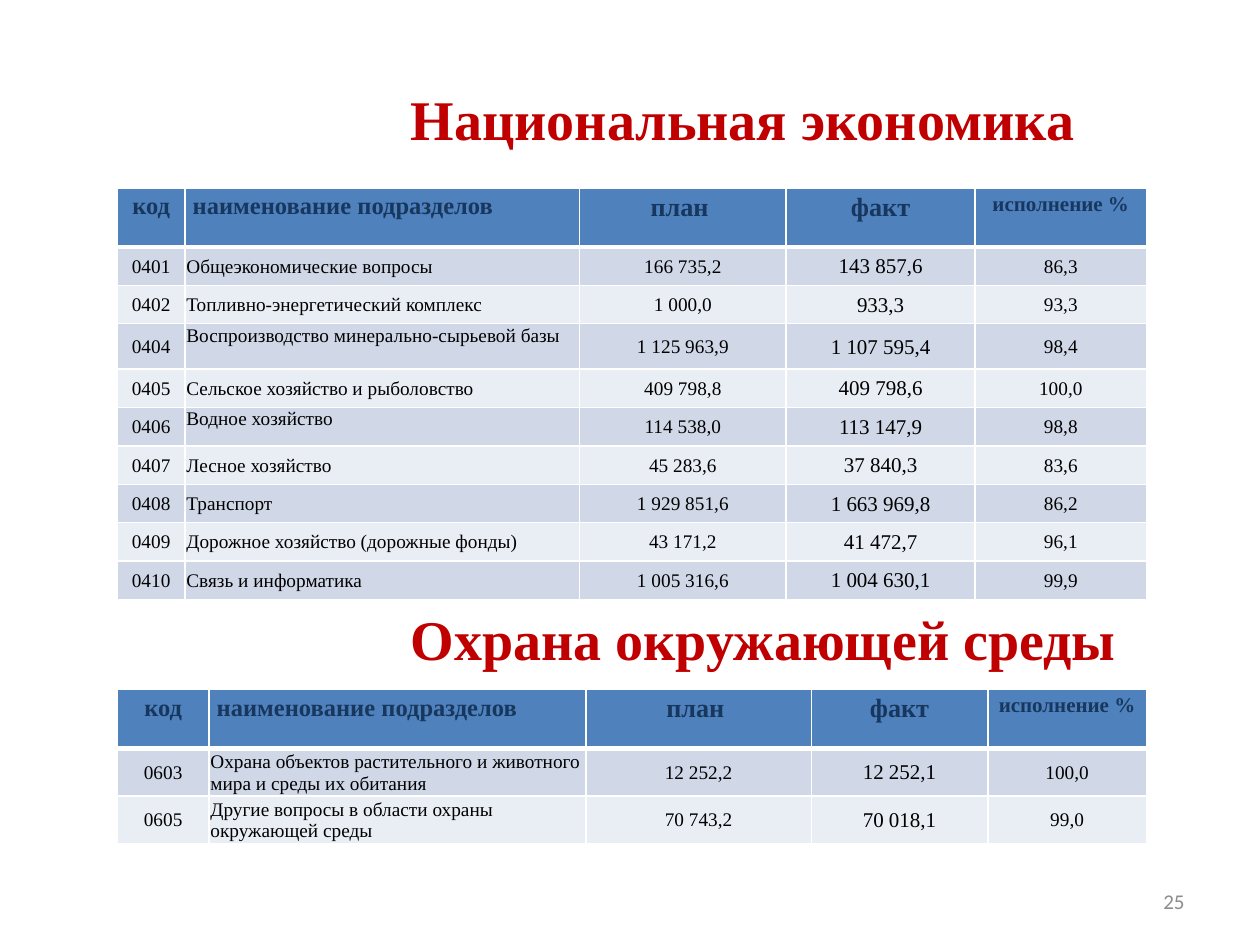
from dataclasses import dataclass

from lxml.etree import SubElement
from pptx import Presentation
from pptx.dml.color import RGBColor
from pptx.enum.text import MSO_ANCHOR, MSO_AUTO_SIZE, PP_ALIGN
from pptx.oxml.ns import qn
from pptx.util import Inches, Pt


@dataclass(frozen=True)
class Theme:
    serif: str = "Times New Roman"
    sans: str = "Calibri"
    heading: str = "C00000"
    header_text: str = "17375E"
    header_fill: str = "4F81BD"
    body_text: str = "000000"
    bands: tuple = ("D0D8E8", "E9EDF4")
    border: str = "FFFFFF"
    page_number: str = "8C8C8C"
    heading_size: int = 32
    header_sizes: tuple = (14, 14, 15, 15, 12)
    body_sizes: tuple = (11, 11, 11, 12, 11)
    page_number_size: int = 12


THEME = Theme()
HEADER_HEIGHT = 0.47
HEADER_MARGINS = (0.06, 0.04, 0.06, 0.04)
BODY_MARGINS = (0.01, 0.01, 0.01, 0)
ALIGNMENTS = (PP_ALIGN.CENTER, PP_ALIGN.LEFT) + (PP_ALIGN.CENTER,) * 3

HEADER = ("код", "наименование подразделов", "план ", "факт", "исполнение %")
ECONOMY = (
    ("0401", "Общеэкономические вопросы", "166 735,2", "143 857,6", "86,3"),
    ("0402", "Топливно-энергетический комплекс", "1 000,0", "933,3", "93,3"),
    ("0404", "Воспроизводство минерально-сырьевой базы",
     "1 125 963,9", "1 107 595,4", "98,4"),
    ("0405", "Сельское хозяйство и рыболовство", "409 798,8", "409 798,6", "100,0"),
    ("0406", "Водное хозяйство", "114 538,0", "113 147,9", "98,8"),
    ("0407", "Лесное хозяйство", "45 283,6", "37 840,3", "83,6"),
    ("0408", "Транспорт", "1 929 851,6", "1 663 969,8", "86,2"),
    ("0409", "Дорожное хозяйство (дорожные фонды)", "43 171,2", "41 472,7", "96,1"),
    ("0410", "Связь и информатика", "1 005 316,6", "1 004 630,1", "99,9"),
)
ENVIRONMENT = (
    ("0603", "Охрана объектов растительного и животного мира и среды их обитания",
     "12 252,2", "12 252,1", "100,0"),
    ("0605", "Другие вопросы в области охраны окружающей среды",
     "70 743,2", "70 018,1", "99,0"),
)


def write(frame, text, size, color, font=THEME.serif, bold=False,
          align=PP_ALIGN.LEFT):
    frame.text = text
    paragraph = frame.paragraphs[0]
    paragraph.alignment = align
    paragraph.font.name = font
    paragraph.font.size = Pt(size)
    paragraph.font.bold = bold
    paragraph.font.color.rgb = RGBColor.from_string(color)


def place(shape, box):
    shape.left, shape.top, shape.width, shape.height = map(Inches, box)


def format_heading(shape, box, text):
    place(shape, box)
    frame = shape.text_frame
    write(frame, text, THEME.heading_size, THEME.heading, bold=True)
    frame.word_wrap = False
    frame.auto_size = MSO_AUTO_SIZE.SHAPE_TO_FIT_TEXT
    frame.vertical_anchor = MSO_ANCHOR.TOP


def add_page_number(slide, box, number):
    frame = slide.shapes.add_textbox(*map(Inches, box)).text_frame
    frame.word_wrap = True
    frame.vertical_anchor = MSO_ANCHOR.MIDDLE
    write(frame, number, THEME.page_number_size, THEME.page_number,
          font=THEME.sans, align=PP_ALIGN.RIGHT)


def format_cell(cell, fill, margins, anchor):
    cell.fill.solid()
    cell.fill.fore_color.rgb = RGBColor.from_string(fill)
    (cell.margin_left, cell.margin_top,
     cell.margin_right, cell.margin_bottom) = map(Inches, margins)
    cell.vertical_anchor = anchor


def add_header_borders(cell):
    """Outline a header cell, with a heavier line below it."""
    properties = cell._tc.get_or_add_tcPr()
    for position, (side, width) in enumerate(
            (("lnL", 1), ("lnR", 1), ("lnT", 1), ("lnB", 3))):
        line = SubElement(properties, qn(f"a:{side}"), w=str(Pt(width)))
        fill = SubElement(line, qn("a:solidFill"))
        SubElement(fill, qn("a:srgbClr"), val=THEME.border)
        properties.insert(position, line)


def add_budget_table(slide, box, column_widths, records, tall_rows=None,
                     top_aligned_names=()):
    """Rows not listed in tall_rows share the remaining height equally."""
    tall_rows = tall_rows or {}
    table = slide.shapes.add_table(
        len(records) + 1, len(HEADER), *map(Inches, box)).table
    for column, width in zip(table.columns, column_widths):
        column.width = Inches(width)

    spare_height = box[3] - HEADER_HEIGHT - sum(tall_rows.values())
    row_height = spare_height / (len(records) - len(tall_rows))
    table.rows[0].height = Inches(HEADER_HEIGHT)
    for index, label in enumerate(HEADER):
        cell = table.cell(0, index)
        write(cell.text_frame, label, THEME.header_sizes[index],
              THEME.header_text, bold=True, align=ALIGNMENTS[index])
        format_cell(cell, THEME.header_fill, HEADER_MARGINS, MSO_ANCHOR.TOP)
        add_header_borders(cell)

    for row, record in enumerate(records, start=1):
        code = record[0]
        table.rows[row].height = Inches(tall_rows.get(code, row_height))
        for index, value in enumerate(record):
            cell = table.cell(row, index)
            write(cell.text_frame, value, THEME.body_sizes[index],
                  THEME.body_text, align=ALIGNMENTS[index])
            at_top = index == 1 and code in top_aligned_names
            format_cell(cell, THEME.bands[(row - 1) % 2], BODY_MARGINS,
                        MSO_ANCHOR.TOP if at_top else MSO_ANCHOR.MIDDLE)


def main():
    presentation = Presentation()
    presentation.slide_width = Inches(10)
    presentation.slide_height = Inches(7.5)
    slide = presentation.slides.add_slide(presentation.slide_layouts[5])

    format_heading(slide.shapes.title, (3.16, 0.62, 5.52, 0.87),
                   "Национальная экономика")
    add_budget_table(slide, (0.93, 1.49, 8.18, 3.27),
                     (0.54, 3.13, 1.64, 1.5, 1.36), ECONOMY,
                     tall_rows={"0404": 0.36},
                     top_aligned_names=("0404", "0406"))

    environment_box = (3.16, 4.75, 5.86, 0.64)
    environment_heading = slide.shapes.add_textbox(*map(Inches, environment_box))
    format_heading(environment_heading, environment_box, "Охрана окружающей среды")
    add_budget_table(slide, (0.93, 5.47, 8.18, 1.22),
                     (0.73, 2.99, 1.79, 1.4, 1.26), ENVIRONMENT)

    add_page_number(slide, (7.17, 6.95, 2.33, 0.4), "25")
    presentation.save("out.pptx")


if __name__ == "__main__":
    main()
